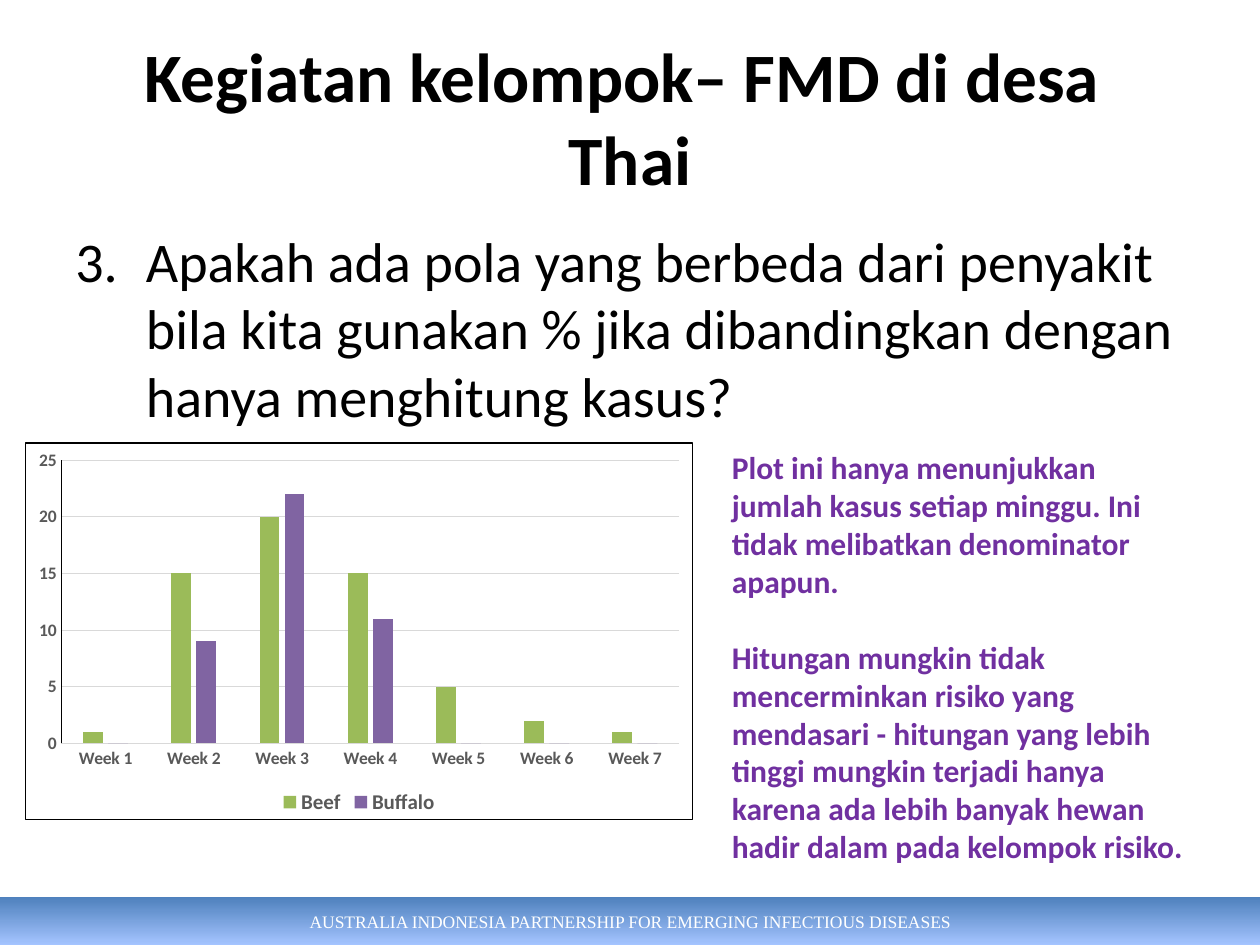
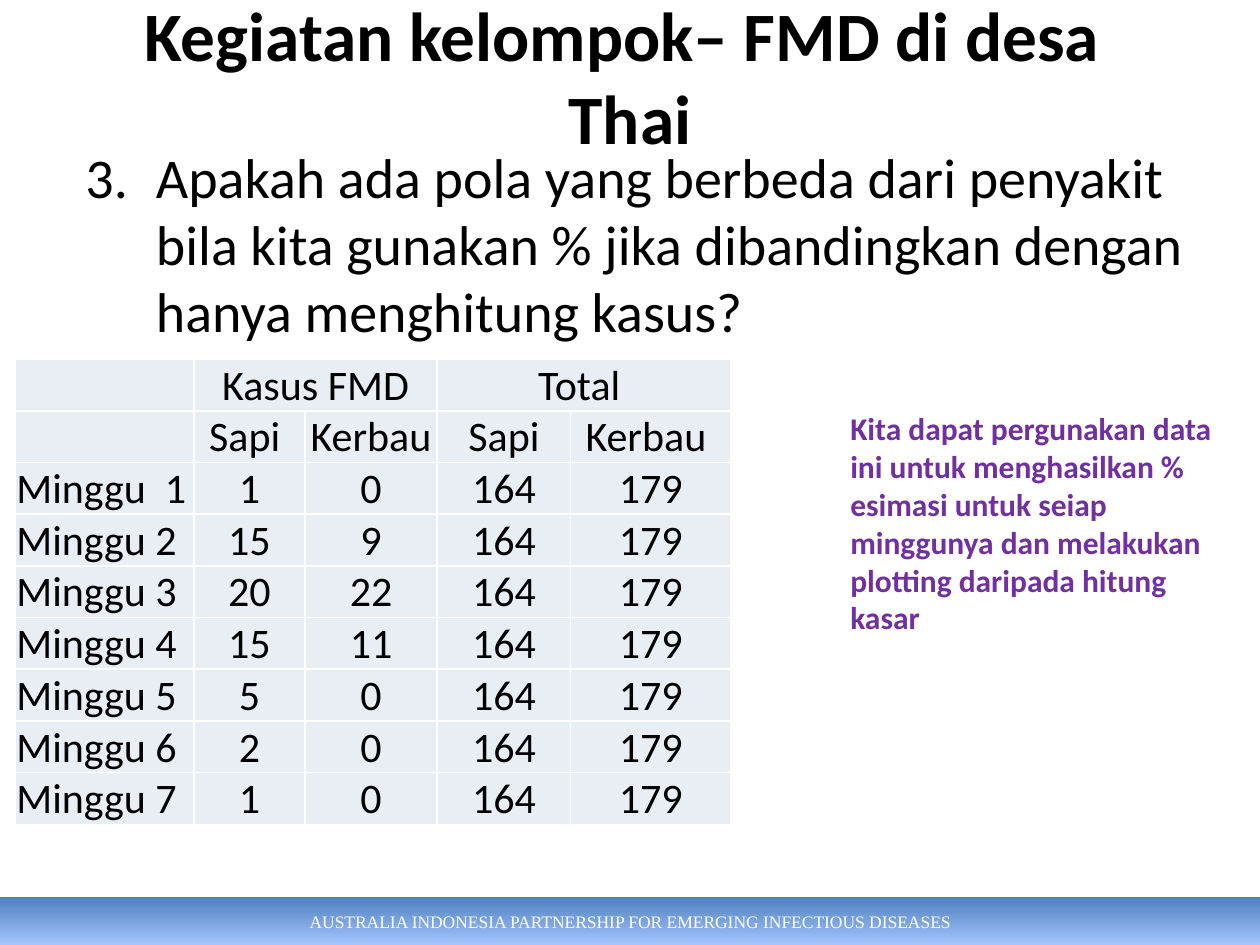
"""Two slides on FMD in a Thai village: weekly case counts and the data behind them."""
from lxml.etree import SubElement
from pptx import Presentation
from pptx.chart.data import CategoryChartData
from pptx.dml.color import RGBColor
from pptx.enum.chart import XL_CHART_TYPE as ChartType, XL_LEGEND_POSITION as LegendSide, XL_TICK_MARK as Tick
from pptx.enum.shapes import MSO_SHAPE as Shape
from pptx.enum.text import MSO_ANCHOR as Anchor, PP_ALIGN as Align
from pptx.oxml import parse_xml
from pptx.oxml.ns import nsdecls, qn
from pptx.util import Inches, Pt

BLACK = RGBColor(0x00, 0x00, 0x00)
WHITE = RGBColor(0xFF, 0xFF, 0xFF)
PURPLE = RGBColor(0x70, 0x30, 0xA0)
BAND_TOP = RGBColor(0x4F, 0x81, 0xBD)
BAND_BOTTOM = RGBColor(0xA4, 0xC4, 0xFF)
AXIS_TEXT = RGBColor(0x59, 0x59, 0x59)
GRID = RGBColor(0xD9, 0xD9, 0xD9)
BEEF = RGBColor(0x9B, 0xBB, 0x59)
BUFFALO = RGBColor(0x80, 0x64, 0xA2)
CELL = RGBColor(0xE9, 0xED, 0xF4)

QUESTION = ("Apakah ada pola yang berbeda dari penyakit bila kita gunakan % "
            "jika dibandingkan dengan hanya menghitung kasus?")
BEEF_CASES = [1, 15, 20, 15, 5, 2, 1]
BUFFALO_CASES = [0, 9, 22, 11, 0, 0, 0]


def style_font(font, size, color, bold=False, name="Calibri"):
    font.name, font.size, font.bold = name, Pt(size), bold
    font.color.rgb = color


def add_text(page, place, paragraphs, size, color, bold=False):
    box = page.shapes.add_textbox(*map(Inches, place))
    box.text_frame.word_wrap = True
    box.text_frame.text = "\n".join(paragraphs)
    for para in box.text_frame.paragraphs:
        style_font(para.font, size, color, bold)
    return box.text_frame


deck = Presentation()
deck.slide_width, deck.slide_height = Inches(10), Inches(7.5)

layouts = [
    ((0.5, 0.3, 9, 1.25), (0.5, 1.75, 9, 2)),
    ((0.5, 0.12, 9, 0.95), (0.58, 1.08, 9, 2)),
]
for title_place, question_place in layouts:
    page = deck.slides.add_slide(deck.slide_layouts[6])

    band = page.shapes.add_shape(Shape.RECTANGLE, 0, Inches(7.12), Inches(10), Inches(0.38))
    band.shadow.inherit = False
    band.line.fill.background()
    band.fill.gradient()
    band.fill.gradient_angle = 270
    for stop, color in zip(band.fill.gradient_stops, (BAND_TOP, BAND_BOTTOM)):
        stop.color.rgb = color
    band.text_frame.vertical_anchor = Anchor.MIDDLE
    para = band.text_frame.paragraphs[0]
    para.text = "AUSTRALIA INDONESIA PARTNERSHIP FOR EMERGING INFECTIOUS DISEASES"
    para.alignment = Align.CENTER
    style_font(para.font, 10, WHITE, name="Times New Roman")

    title = add_text(page, title_place, ["Kegiatan kelompok– FMD di desa "], 39.6, BLACK, True)
    title.vertical_anchor = Anchor.MIDDLE
    para = title.paragraphs[0]
    para.alignment = Align.CENTER
    para.add_line_break()
    para.add_run().text = "Thai"

    question = add_text(page, question_place, [], 32, BLACK)
    para = question.paragraphs[0]
    para.text = QUESTION
    numbering = para._p.get_or_add_pPr()
    numbering.set("marL", str(Inches(0.56)))
    numbering.set("indent", str(-Inches(0.56)))
    number = SubElement(numbering, qn("a:buAutoNum"), type="arabicPeriod", startAt="3")
    numbering.remove(number)
    numbering.insert(0, number)

chart_page, table_page = deck.slides

cases = CategoryChartData()
cases.categories = [f"Week {week}" for week in range(1, 8)]
cases.add_series("Beef", BEEF_CASES)
cases.add_series("Buffalo", BUFFALO_CASES)
chart = chart_page.shapes.add_chart(ChartType.COLUMN_CLUSTERED, Inches(0.2), Inches(3.51),
                                    Inches(5.3), Inches(3), cases).chart
style_font(chart.font, 10, BLACK)
chart.has_title = False
chart.has_legend = True
chart.legend.position = LegendSide.BOTTOM
chart.legend.include_in_layout = False
style_font(chart.legend.font, 12, AXIS_TEXT, True)
plot = chart.plots[0]
plot.vary_by_categories = False
plot.gap_width, plot.overlap = 219, -27
for series, color in zip(plot.series, (BEEF, BUFFALO)):
    series.format.fill.solid()
    series.format.fill.fore_color.rgb = color
for axis, color in ((chart.category_axis, GRID), (chart.value_axis, BLACK)):
    axis.major_tick_mark = axis.minor_tick_mark = Tick.NONE
    axis.format.line.color.rgb = color
    axis.format.line.width = Pt(0.75)
    style_font(axis.tick_labels.font, 10, AXIS_TEXT, True)
chart.value_axis.minimum_scale, chart.value_axis.maximum_scale = 0, 25
chart.value_axis.major_unit = 5
grid_line = chart.value_axis.major_gridlines.format.line
grid_line.color.rgb, grid_line.width = GRID, Pt(0.75)
chart.element.find(qn("c:chart")).addnext(parse_xml(
    f'<c:spPr {nsdecls("c", "a")}><a:solidFill><a:srgbClr val="{WHITE}"/></a:solidFill>'
    f'<a:ln w="{Pt(0.75)}"><a:solidFill><a:srgbClr val="{BLACK}"/></a:solidFill></a:ln></c:spPr>'))

comment = add_text(chart_page, (5.71, 3.51, 3.79, 3.43), [
    "Plot ini hanya menunjukkan jumlah kasus setiap minggu. Ini tidak melibatkan denominator apapun.",
    "Hitungan mungkin tidak mencerminkan risiko yang mendasari - hitungan yang lebih tinggi "
    "mungkin terjadi hanya karena ada lebih banyak hewan hadir dalam pada kelompok risiko.",
], 18, PURPLE, True)
comment.paragraphs[1].space_before = Pt(22)

add_text(table_page, (6.65, 3.2, 3.23, 1.92), [
    "Kita dapat pergunakan data ini untuk menghasilkan % esimasi untuk seiap minggunya "
    "dan melakukan plotting daripada hitung kasar",
], 18, PURPLE, True)

rows = [["", "Kasus FMD", "", "Total ", ""], ["", "Sapi ", "Kerbau", "Sapi", "Kerbau "]]
for week, (beef, buffalo) in enumerate(zip(BEEF_CASES, BUFFALO_CASES), 1):
    label = "Minggu  1" if week == 1 else f"Minggu {week}"
    rows.append([label, beef, buffalo, 164, 179])
table = table_page.shapes.add_table(len(rows), 5, Inches(0.12), Inches(2.85),
                                    Inches(5.67), Inches(3.69)).table
table.first_row = table.horz_banding = False
for column, width in zip(table.columns, (1.42, 0.88, 1.05, 1.06, 1.27)):
    column.width = Inches(width)
for row_index, values in enumerate(rows):
    table.rows[row_index].height = Inches(0.41)
    for column_index, value in enumerate(values):
        cell = table.cell(row_index, column_index)
        cell.margin_left = cell.margin_right = cell.margin_top = Inches(0.01)
        cell.margin_bottom = 0
        cell.vertical_anchor = Anchor.BOTTOM
        for side in ("lnL", "lnR", "lnT", "lnB"):
            cell._tc.get_or_add_tcPr().append(parse_xml(
                f'<a:{side} {nsdecls("a")} w="{Pt(1)}"><a:solidFill>'
                f'<a:srgbClr val="{WHITE}"/></a:solidFill></a:{side}>'))
        cell.fill.solid()
        cell.fill.fore_color.rgb = CELL
        para = cell.text_frame.paragraphs[0]
        para.text = str(value)
        para.alignment = Align.CENTER if column_index else Align.LEFT
        style_font(para.font, 24, BLACK)
for first in (1, 3):
    table.cell(0, first).merge(table.cell(0, first + 1))

deck.save("out.pptx")
